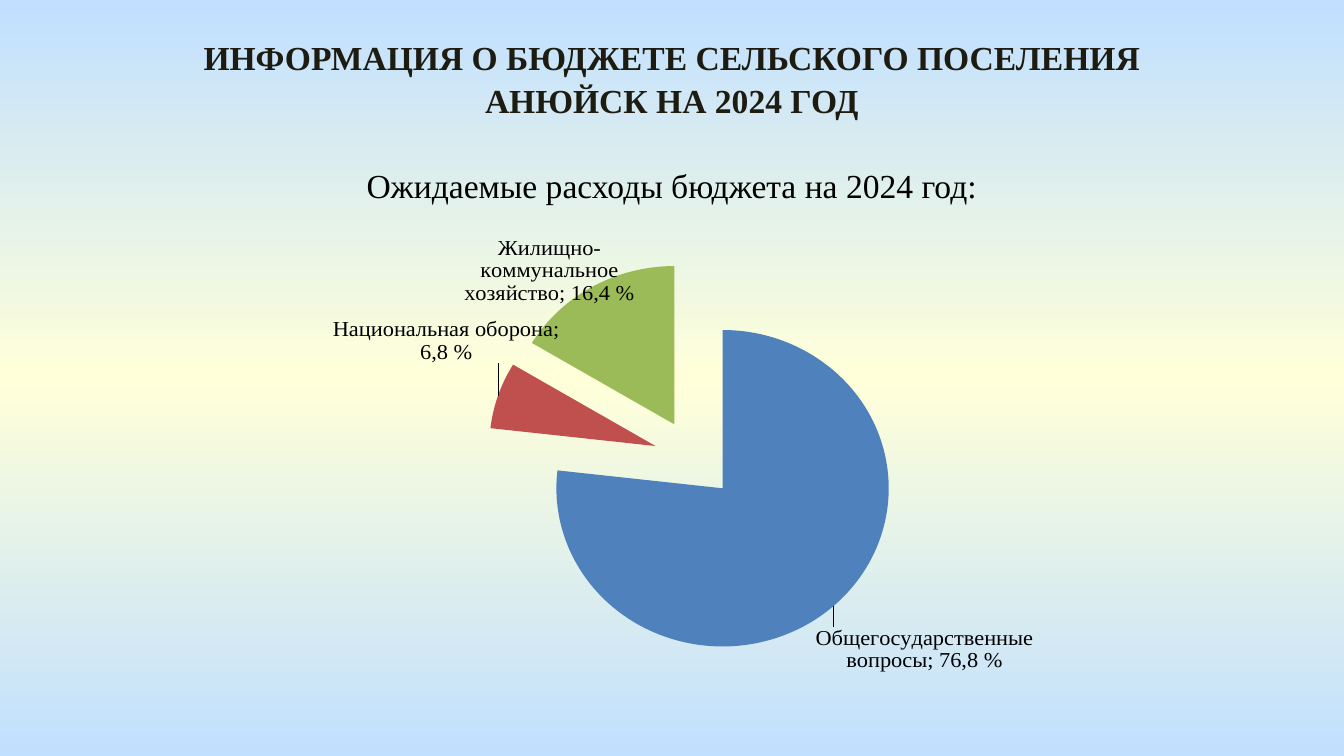
"""Build a slide with a pie chart of the expected budget expenses for 2024."""
from copy import deepcopy

from lxml.etree import SubElement
from pptx import Presentation
from pptx.chart.data import CategoryChartData
from pptx.dml.color import RGBColor
from pptx.enum.chart import XL_CHART_TYPE, XL_LABEL_POSITION
from pptx.enum.text import MSO_ANCHOR, MSO_AUTO_SIZE, PP_ALIGN
from pptx.oxml.ns import qn
from pptx.util import Pt

PX = 6804
SKY = RGBColor(0xC1, 0xE0, 0xFF)
CREAM = RGBColor(0xFF, 0xFF, 0xD9)
BLACK = RGBColor(0, 0, 0)
DARK = RGBColor(0x1E, 0x1C, 0x11)
BLUE = RGBColor(0x4F, 0x81, 0xBD)
RED = RGBColor(0xC0, 0x50, 0x4D)
GREEN = RGBColor(0x9B, 0xBB, 0x59)
SERIF = "Times New Roman"

TITLE = "ИНФОРМАЦИЯ О БЮДЖЕТЕ СЕЛЬСКОГО ПОСЕЛЕНИЯ АНЮЙСК НА 2024 ГОД"
SUBTITLE = "Ожидаемые расходы бюджета на 2024 год:"
TITLE_BOX = (122, 28, 1100, 95)
SUBTITLE_BOX = (172, 156, 1000, 54)
CHART_BOX = (97, 212, 1150, 513)
PLOT_BOX = {"x": 0.1, "y": 0.05, "w": 0.84, "h": 0.81}
EXPENSES = [
    ("Общегосударственные вопросы", 0.768, "76,8 %", BLUE, (-0.02, 0.03)),
    ("Национальная оборона", 0.068, "6,8 %", RED, (0.06, -0.06)),
    ("Жилищно-коммунальное хозяйство", 0.164, "16,4 %", GREEN, (0.04, 0.03)),
]


def px(box):
    return [n * PX for n in box]


def write_heading(sp, text, color, bold):
    tf = sp.text_frame
    tf.word_wrap = True
    tf.auto_size = MSO_AUTO_SIZE.NONE
    tf.vertical_anchor = MSO_ANCHOR.TOP
    p = tf.paragraphs[0]
    p.alignment = PP_ALIGN.CENTER
    p.line_spacing = 1.06
    r = p.add_run()
    r.text = text
    r.font.name, r.font.size, r.font.bold = SERIF, Pt(18), bold
    r.font.color.rgb = color


def add_layout(parent, index, settings):
    for old in parent.findall(qn("c:layout")):
        parent.remove(old)
    layout = SubElement(parent, qn("c:layout"))
    manual = SubElement(layout, qn("c:manualLayout"))
    for tag, val in settings.items():
        SubElement(manual, qn(f"c:{tag}")).set("val", str(val))
    parent.insert(index, layout)


def paint_background(slide):
    fill = slide.background.fill
    fill.gradient()
    gs_list = slide.element.find(".//" + qn("a:gsLst"))
    gs_list.insert(1, deepcopy(gs_list[0]))
    fill.gradient_angle = 90
    for stop, pos, color in zip(fill.gradient_stops, (0, 0.5, 1), (SKY, CREAM, SKY)):
        stop.position = pos
        stop.color.rgb = color


def add_pie(slide):
    data = CategoryChartData(number_format="0.0%")
    data.categories = [name for name, *_ in EXPENSES]
    data.add_series("Series 1", [value for _, value, *_ in EXPENSES])
    chart = slide.shapes.add_chart(XL_CHART_TYPE.PIE, *px(CHART_BOX), data).chart
    chart.has_title = chart.has_legend = False
    chart.font.name, chart.font.size = "Calibri", Pt(18)
    chart.font.color.rgb = BLACK
    plot = chart.plots[0]
    plot.vary_by_categories = True
    ser = plot.series[0]

    labels = ser.data_labels
    labels.show_value = labels.show_category_name = True
    labels.number_format, labels.number_format_is_linked = "0.0%", False
    labels.position = XL_LABEL_POSITION.OUTSIDE_END
    labels.font.name, labels.font.size = SERIF, Pt(12)
    labels.font.color.rgb = BLACK

    for i, (name, _, share, color, (dx, dy)) in enumerate(EXPENSES):
        point = ser.points[i]
        point.format.fill.solid()
        point.format.fill.fore_color.rgb = color
        label = point.data_label
        r = label.text_frame.paragraphs[0].add_run()
        r.text = f"{name}; {share}"
        r.font.name, r.font.size = SERIF, Pt(12)
        r.font.color.rgb = BLACK
        label.position = XL_LABEL_POSITION.OUTSIDE_END

    for d_lbl, (*_, (dx, dy)) in zip(ser._element.iter(qn("c:dLbl")), EXPENSES):
        add_layout(d_lbl, 1, {"x": dx, "y": dy})
        d_lbl.find(qn("c:showCatName")).set("val", "1")

    explosion = SubElement(ser._element, qn("c:explosion"))
    explosion.set("val", "25")
    ser._element.find(qn("c:dPt")).addprevious(explosion)
    modes = {"layoutTarget": "inner", "xMode": "edge", "yMode": "edge"}
    add_layout(chart._chartSpace.find(".//" + qn("c:plotArea")), 0, modes | PLOT_BOX)


def main():
    prs = Presentation()
    prs.slide_width, prs.slide_height = px((1344, 756))
    slide = prs.slides.add_slide(prs.slide_layouts[5])
    paint_background(slide)
    title = slide.shapes.title
    title.left, title.top, title.width, title.height = px(TITLE_BOX)
    write_heading(title, TITLE, DARK, True)
    write_heading(slide.shapes.add_textbox(*px(SUBTITLE_BOX)), SUBTITLE, BLACK, False)
    add_pie(slide)
    prs.save("out.pptx")


if __name__ == "__main__":
    main()
